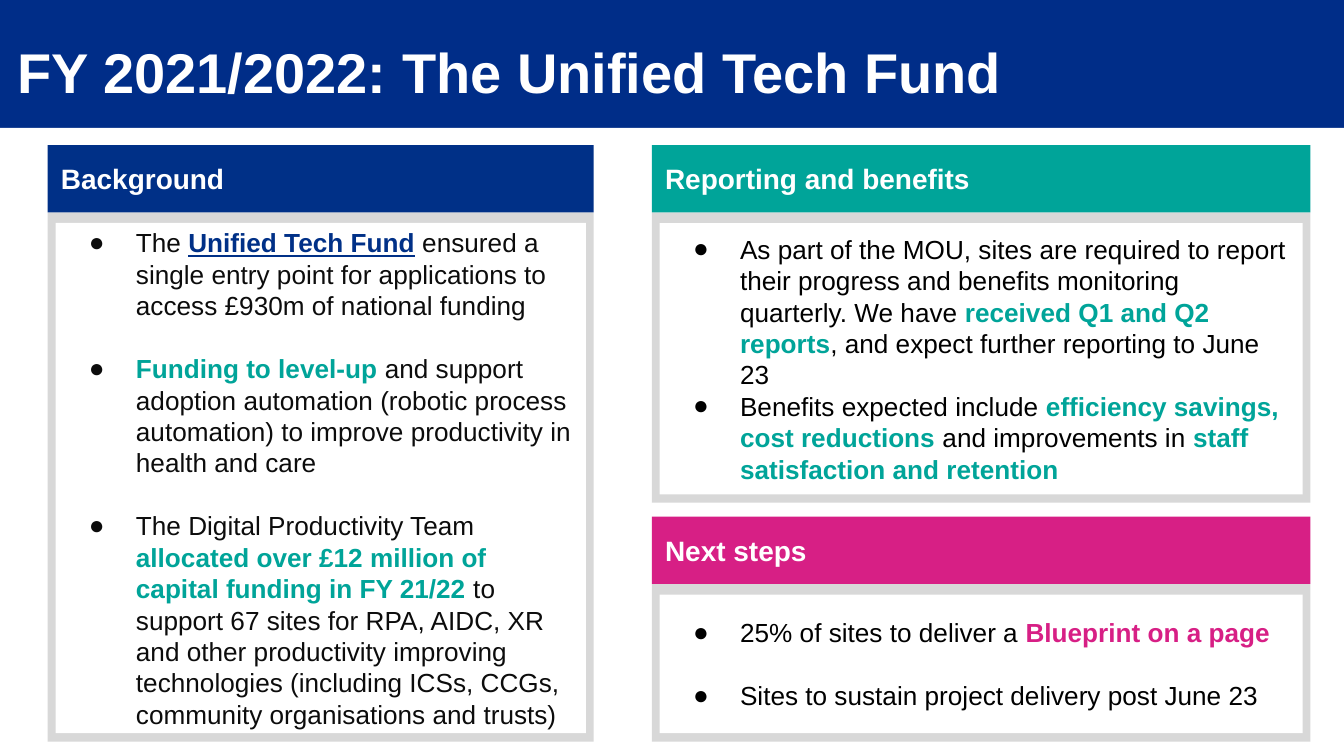
from lxml import etree
from pptx import Presentation
from pptx.dml.color import RGBColor
from pptx.enum import shapes, text
from pptx.oxml import ns
from pptx.util import Emu, Inches, Pt

COLOURS = {
    "banner": "002D88", "navy": "003087", "teal": "00A499", "pink": "D71F85",
    "frame": "D8D8D8", "white": "FFFFFF", "ink": "0C0C0C", "black": "000000",
}
WIDTH = Inches(10)
HEIGHT = Emu(WIDTH * 9 // 16)
HEADING_HEIGHT = 8.9
SIDE, ABOVE, BELOW = 0.58, 1.4, 1.1

BACKGROUND = [
    [("The ", None), ("Unified Tech Fund", "navy"),
     (" ensured a single entry point for applications to access £930m of national funding", None)],
    [("Funding to level-up", "teal"),
     (" and support adoption automation (robotic process automation) to improve "
      "productivity in health and care", None)],
    [("The Digital Productivity Team ", None),
     ("allocated over £12 million of capital funding in FY 21/22", "teal"),
     (" to support 67 sites for RPA, AIDC, XR and other productivity improving technologies "
      "(including ICSs, CCGs, community organisations and trusts)", None)],
]
REPORTING = [
    [("As part of the MOU, sites are required to report their progress and benefits "
      "monitoring quarterly. We have ", None),
     ("received Q1 and Q2 reports", "teal"),
     (", and expect further reporting to June 23", None)],
    [("Benefits expected include ", None),
     ("efficiency savings, cost reductions", "teal"),
     (" and improvements in ", None),
     ("staff satisfaction and retention", "teal")],
]
NEXT_STEPS = [
    [("25% of sites to deliver a ", None), ("Blueprint on a page", "pink")],
    [("Sites to sustain project delivery post June 23", None)],
]


def rgb(name):
    """Return the named palette colour."""
    return RGBColor.from_string(COLOURS[name])


def place(left, top, width, height):
    """Turn percentages of the slide into a position and a size."""
    return [Emu(int(side * share / 100)) for side, share in
            zip((WIDTH, HEIGHT, WIDTH, HEIGHT), (left, top, width, height))]


def add_block(slide, area, colour):
    """Add a plain filled rectangle with room for left-aligned text."""
    block = slide.shapes.add_shape(shapes.MSO_SHAPE.RECTANGLE, *place(*area))
    block.shadow.inherit = False
    block.fill.solid()
    block.fill.fore_color.rgb = rgb(colour)
    block.line.fill.background()
    frame = block.text_frame
    frame.word_wrap = True
    frame.vertical_anchor = text.MSO_ANCHOR.MIDDLE
    frame.margin_left = frame.margin_right = Inches(0.1)
    frame.margin_top = frame.margin_bottom = Inches(0.1)
    return frame


def add_run(paragraph, words, size, colour, bold=False):
    """Append one styled run to a paragraph."""
    run = paragraph.add_run()
    run.text = words
    run.font.name = "Arial"
    run.font.size = Pt(size)
    run.font.bold = bold
    run.font.color.rgb = rgb(colour)
    return run


def add_bullet(paragraph, colour):
    """Give a paragraph a hanging round bullet."""
    properties = paragraph._p.get_or_add_pPr()
    properties.set("marL", str(Inches(0.5)))
    properties.set("indent", str(-Inches(0.35)))
    tint = etree.SubElement(properties, ns.qn("a:buClr"))
    etree.SubElement(tint, ns.qn("a:srgbClr"), val=COLOURS[colour])
    etree.SubElement(properties, ns.qn("a:buFont"), typeface="Arial")
    etree.SubElement(properties, ns.qn("a:buChar"), char="●")


def add_points(frame, points, ink, gap):
    """Write bulleted points whose highlighted words are bold."""
    for index, point in enumerate(points):
        paragraph = frame.add_paragraph() if index else frame.paragraphs[0]
        add_bullet(paragraph, ink)
        paragraph.alignment = text.PP_ALIGN.LEFT
        paragraph.space_before = Pt(gap if index else 0)
        for words, accent in point:
            run = add_run(paragraph, words, 14, accent or ink, bool(accent))
            if accent == "navy":
                run.font.underline = True


def add_panel(slide, area, heading, colour, points, ink, gap):
    """Add a coloured heading above a framed card of points."""
    left, top, width, height = area
    body_top, body_height = top + HEADING_HEIGHT, height - HEADING_HEIGHT
    add_block(slide, (left, body_top, width, body_height), "frame")
    card = add_block(slide, (left + SIDE, body_top + ABOVE, width - 2 * SIDE,
                             body_height - ABOVE - BELOW), "white")
    add_points(card, points, ink, gap)
    label = add_block(slide, (left, top, width, HEADING_HEIGHT), colour).paragraphs[0]
    label.alignment = text.PP_ALIGN.LEFT
    add_run(label, heading, 15, "white", True)


def add_title(slide, words):
    """Write the slide title on the banner."""
    frame = slide.shapes.add_textbox(*place(1.3, 5, 83.5, 8.9)).text_frame
    frame.word_wrap = True
    frame.margin_left = frame.margin_right = frame.margin_top = frame.margin_bottom = 0
    add_run(frame.paragraphs[0], words, 30, "white", True)


def main():
    """Build and save the slide."""
    deck = Presentation()
    deck.slide_width, deck.slide_height = WIDTH, HEIGHT
    slide = deck.slides.add_slide(deck.slide_layouts[6])
    slide.background.fill.solid()
    slide.background.fill.fore_color.rgb = rgb("banner")
    add_block(slide, (0, 16.9, 100, 83.1), "white")
    add_title(slide, "FY 2021/2022: The Unified Tech Fund")
    add_panel(slide, (3.55, 19.2, 40.63, 78.9), "Background", "navy", BACKGROUND, "ink", 17)
    add_panel(slide, (48.5, 19.2, 49, 47.3), "Reporting and benefits", "teal",
              REPORTING, "black", 0)
    add_panel(slide, (48.5, 68.35, 49, 29.75), "Next steps", "pink", NEXT_STEPS, "black", 17)
    deck.save("out.pptx")


if __name__ == "__main__":
    main()
